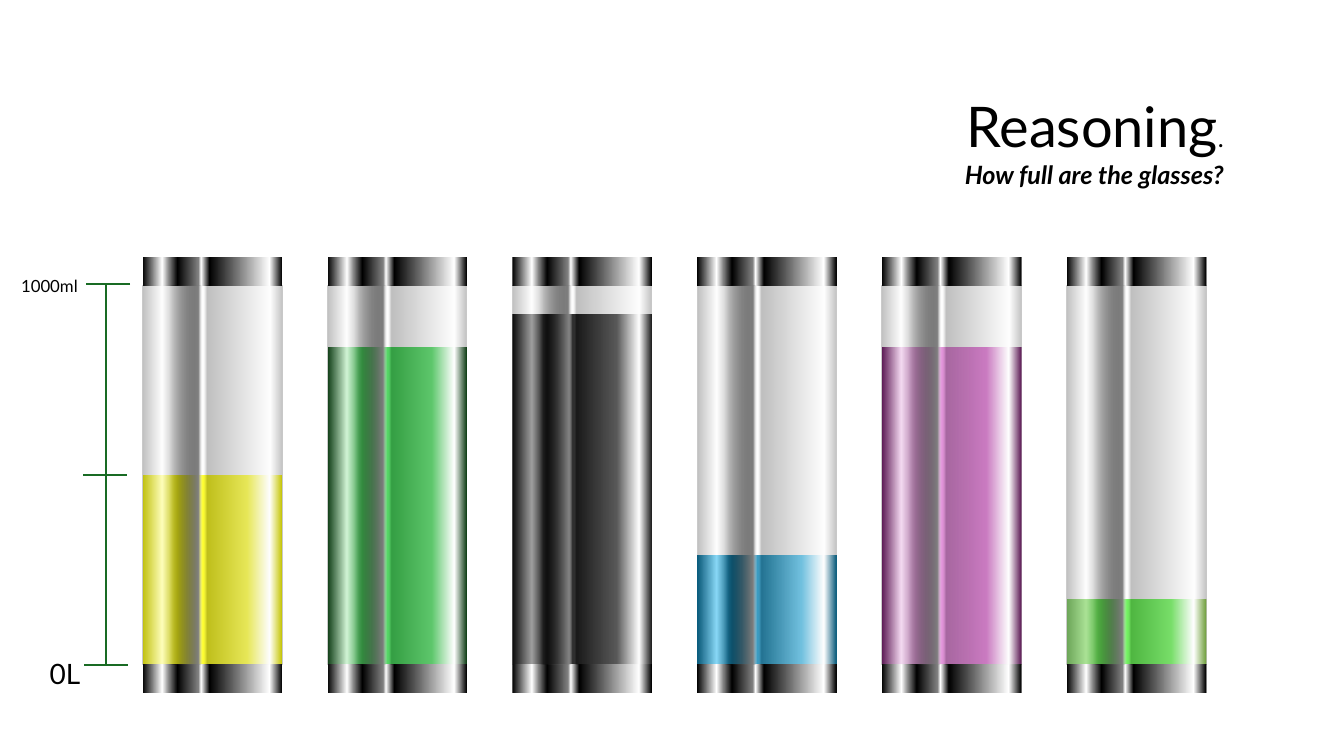
"""Build the slide that asks how full six glasses are."""
from lxml.etree import SubElement
from pptx import Presentation
from pptx.dml.color import RGBColor
from pptx.enum.shapes import MSO_CONNECTOR, MSO_SHAPE
from pptx.enum.text import MSO_ANCHOR, MSO_AUTO_SIZE, PP_ALIGN
from pptx.oxml.ns import qn
from pptx.util import Pt

HUES = {
    "text": "000000",
    "scale": "196B24",
    "yellow": ["FFFF11", "FFFFA3", "FFFF11", "FFFF3F", "FFFFFF", "FFFF00"],
    "green": ["13501B", "C2F1C8", "47D45A", "47D45A", "FFFFFF", "13501B"],
    "black": ["0D0D0D", "808080", "0D0D0D", "404040", "FFFFFF", "262626"],
    "blue": ["0B76A0", "61CBF4", "0B76A0", "61CBF4", "FFFFFF", "0B76A0"],
    "pink": ["78206E", "F2CFEE", "E59EDD", "D86ECC", "FFFFFF", "78206E"],
    "lime": ["8ED973", "8ED973", "6AF357", "6AF357", "FFFFFF", "92D050"],
    "metal": ["000000", "FFFFFF", "808080", "000000", "808080",
              "FFFFFF", "000000", "FFFFFF", "000000"],
}
FILL_STOPS = [0, 14, 25, 75, 91, 100]
CAP_STOPS = [0, 14, 19, 25, 40, 42, 48, 91, 100]
GLASS_STOPS = [0, 14, 19, 22, 40, 43, 46, 91, 100]
GLASS_ALPHA = [25, 25, 25, 25, 100, 5, 25, 25, 25]

LEFT, STEP, WIDTH = 102, 132, 99.5
TOP, BASE, CAP = 204, 474.6, 20.5
LEVELS = [("yellow", 135.4), ("green", 226.9), ("black", 250.4),
          ("blue", 77.9), ("pink", 226.9), ("lime", 46.9)]


def write(frame, text, size=18, align=PP_ALIGN.CENTER, bold=False, italic=False):
    """Add a run of text to the first paragraph of a frame."""
    para = frame.paragraphs[0]
    para.alignment = align
    run = para.add_run()
    run.text = text
    font = run.font
    font.name, font.size, font.bold, font.italic = "Lato", Pt(size), bold, italic
    font.color.rgb = RGBColor.from_string(HUES["text"])


def shade(top, high, stops, hues, alphas):
    """Draw a block of the current glass with a level gradient."""
    block = slide.shapes.add_shape(
        MSO_SHAPE.RECTANGLE, Pt(left), Pt(top), Pt(WIDTH), Pt(high))
    block.shadow.inherit = False
    block.line.fill.background()
    block.fill.gradient()
    block.fill.gradient_angle = 0
    ramp = block.element.spPr.find(".//" + qn("a:gsLst"))
    ramp.clear()
    for stop, hue, alpha in zip(stops, hues, alphas):
        mark = SubElement(ramp, qn("a:gs"), pos=str(stop * 1000))
        tint = SubElement(mark, qn("a:srgbClr"), val=hue)
        if alpha < 100:
            SubElement(tint, qn("a:alpha"), val=str(alpha * 1000))


deck = Presentation()
deck.slide_width, deck.slide_height = Pt(960), Pt(540)
slide = deck.slides.add_slide(deck.slide_layouts[5])

for spot, (name, high) in enumerate(LEVELS):
    left = LEFT + spot * STEP
    shade(BASE - high, high, FILL_STOPS, HUES[name], [100] * 6)
    for top in (TOP - CAP, BASE):
        shade(top, CAP, CAP_STOPS, HUES["metal"], [100] * 9)
    shade(TOP, BASE - TOP, GLASS_STOPS, HUES["metal"], GLASS_ALPHA)

scale = slide.shapes.add_group_shape().shapes
for x1, y1, x2, y2 in [(75.6, 203, 75.6, 476), (92.9, 203, 61.2, 203),
                       (91.4, 475.2, 59.8, 475.2), (90.7, 339.1, 59, 339.1)]:
    line = scale.add_connector(
        MSO_CONNECTOR.STRAIGHT, Pt(x1), Pt(y1), Pt(x2), Pt(y2))
    line.line.color.rgb = RGBColor.from_string(HUES["scale"])
    line.line.width = Pt(1.5)
    SubElement(line.element.spPr, qn("a:effectLst"))
for text, size, x, y, wide, high in [("0L", 20, 25.2, 465.1, 42.5, 29.5),
                                     ("1000ml", 12, 7.2, 193.7, 56.2, 21.6)]:
    frame = scale.add_textbox(Pt(x), Pt(y), Pt(wide), Pt(high)).text_frame
    frame.word_wrap = True
    write(frame, text, size=size)

title = slide.shapes.title
title.left, title.top, title.width, title.height = Pt(679), Pt(62), Pt(202.3), Pt(55.4)
head = title.text_frame
head.word_wrap = True
head.auto_size = MSO_AUTO_SIZE.NONE
head.vertical_anchor = MSO_ANCHOR.TOP
write(head, "Reasoning", size=40, align=PP_ALIGN.RIGHT)
write(head, ".", align=PP_ALIGN.RIGHT)

ask = slide.shapes.add_textbox(Pt(661.7), Pt(110.2), Pt(219.6), Pt(28.8)).text_frame
ask.word_wrap = True
write(ask, "How full are the glasses?", align=PP_ALIGN.RIGHT, bold=True, italic=True)

deck.save("out.pptx")
